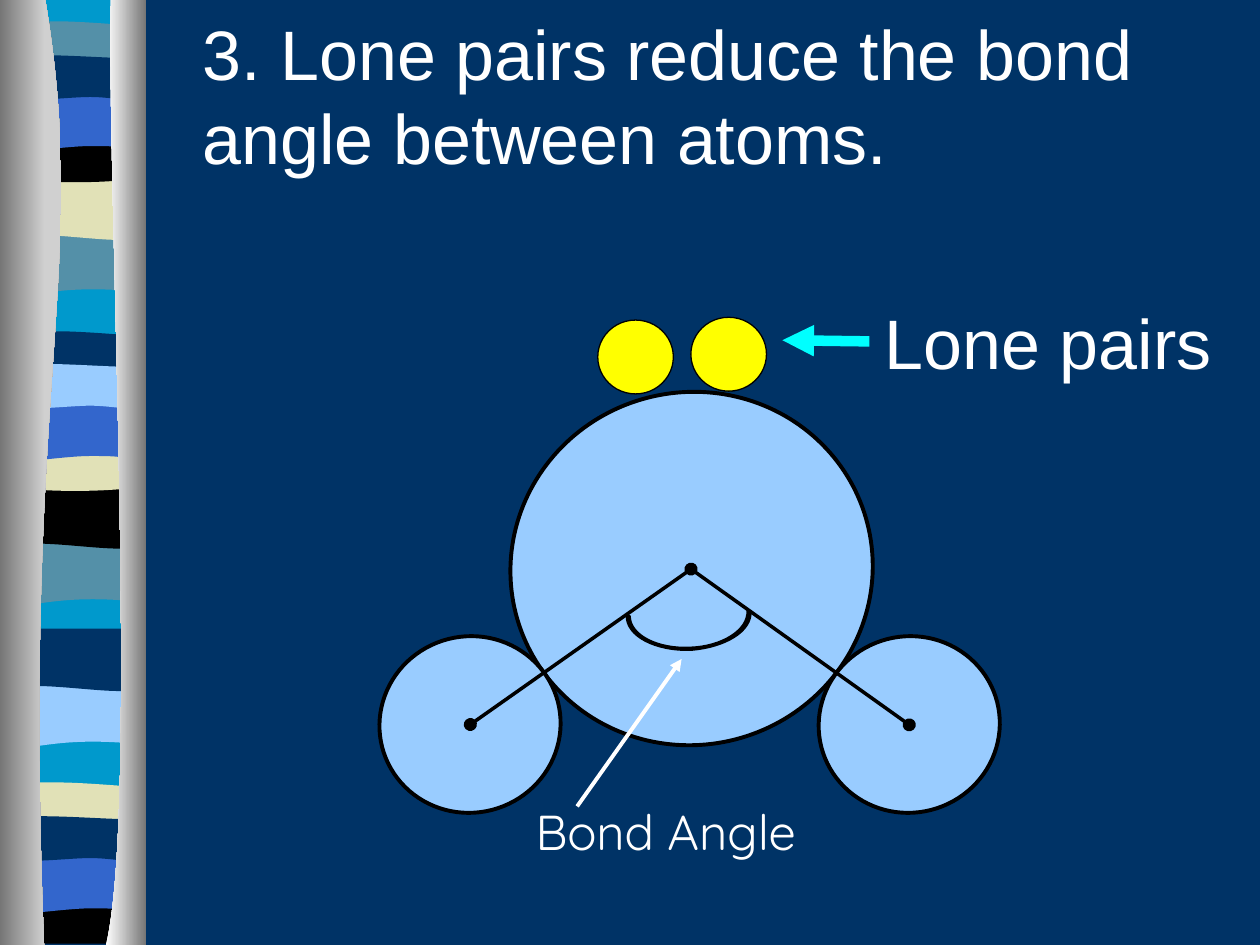
from lxml import etree
from pptx import Presentation
from pptx import util as u
from pptx.dml.color import RGBColor
from pptx.enum import shapes, text
from pptx.oxml import ns

Pt = u.Pt
NAVY = RGBColor(0x00, 0x33, 0x66)
TEAL = RGBColor(0x00, 0x99, 0xCC)
SLATE = RGBColor(0x54, 0x90, 0xA8)
CREAM = RGBColor(0xE1, 0xE1, 0xB7)
ROYAL = RGBColor(0x33, 0x66, 0xCC)
SKY = RGBColor(0x99, 0xCC, 0xFF)
BLACK = RGBColor(0x00, 0x00, 0x00)
WHITE = RGBColor(0xFF, 0xFF, 0xFF)
YELLOW = RGBColor(0xFF, 0xFF, 0x00)
CYAN = RGBColor(0x00, 0xFF, 0xFF)
GREY = RGBColor(0x76, 0x76, 0x76)
SILVER = RGBColor(0xD0, 0xD0, 0xD0)

L, R = 3.8, 81.8
BANDS = {
    "dip": [(R, 0), (R, 33.8), (28, 28.1, 17, 39.6, L, 33.8), (L, 0)],
    "swell": [(R, 0), (R, 33.8), (69, 39.6, 28, 29.5, L, 33.8), (L, 0)],
    "crest": [(R, 0), (R, 17.3), (69, 20.2, 17, 20.2, L, 17.3), (L, 0),
              (8.6, -3.6, 21, -2.9, 33.5, -2.9), (46.5, -2.9, 72, -0.7, R, 0)],
    "bowl": [(R, 0), (R, 23.2), (69, 27.4, 17, 27.4, L, 23.2), (L, 0),
             (51.5, 3.6, 65.5, 0, R, 0)],
    "arch": [(R, 0), (R, 33.8), (70, 30.2, 65, 30.2, 51.5, 30.2),
             (39, 30.2, 15.5, 33.8, L, 33.8), (L, 0)],
    "ripple": [(R, 0), (R, 22.3), (77, 25.9, 65, 22.3, 51.5, 22.3),
               (39, 22.3, 12, 25.9, L, 22.3), (L, 0),
               (15, -3.6, 57, 0, 70, 0), (82.8, 0, 79, 0, R, 0)],
    "floor": [(R, 0), (R, 26.6), (L, 26.6), (L, 0), (51.5, 3.6, 65.5, 0, R, 0)],
}
STRIPES = [
    ("dip", 133.2, SLATE), ("swell", 101.5, CREAM), ("crest", 15.1, SLATE),
    ("bowl", 77.8, BLACK), ("arch", 53.3, ROYAL), ("ripple", 33.1, NAVY),
    ("dip", 310.3, SLATE), ("swell", 277.9, BLACK), ("crest", 192.2, NAVY),
    ("bowl", 254.2, CREAM), ("arch", 230.4, ROYAL), ("ripple", 209.5, SKY),
    ("dip", 391.7, SKY), ("swell", 359.3, NAVY), ("crest", 450, CREAM),
    ("floor", 512.6, BLACK), ("arch", 488.9, ROYAL), ("ripple", 468, NAVY),
]
LEFT_CURTAIN = [(25.9, 0), (51.8, 155.5, 12.2, 213.1, 25.2, 540), (0, 540), (0, 0)]
RIGHT_CURTAIN = [(63.4, 0), (60.5, 90, 79.9, 465.1, 60.5, 540), (83.5, 540), (83.5, 0)]
ANGLE_ARC = [(360, 352), (360, 363, 376, 371, 394.6, 370),
             (412.5, 369.4, 427.7, 360, 427, 349), (429, 349),
             (430, 361, 414, 370, 394.6, 371.5), (374.4, 372, 358, 363.6, 358, 352)]


def bend(outline, segments, top):
    path = next(outline._element.iter(ns.qn("a:path")))
    for step, segment in zip(list(path), segments):
        if len(segment) == 2:
            continue
        curve = etree.Element(ns.qn("a:cubicBezTo"))
        for x, y in zip(segment[::2], segment[1::2]):
            etree.SubElement(curve, ns.qn("a:pt"), x=str(Pt(x) - outline.left),
                             y=str(Pt(y + top) - outline.top))
        path.replace(step, curve)


def add_outline(slide, segments, color=None, top=0):
    corners = [(Pt(segment[-2]), Pt(segment[-1] + top)) for segment in segments]
    builder = slide.shapes.build_freeform(*corners[0], scale=1.0)
    builder.add_line_segments(corners[1:], close=True)
    outline = builder.convert_to_shape()
    bend(outline, segments, top)
    outline.shadow.inherit = False
    outline.line.fill.background()
    if color is not None:
        outline.fill.solid()
        outline.fill.fore_color.rgb = color
    return outline


def add_curtain(slide, segments, left_color, right_color):
    fill = add_outline(slide, segments).fill
    fill.gradient()
    fill.gradient_angle = 0
    for stop, color in zip(fill.gradient_stops, (left_color, right_color)):
        stop.color.rgb = color


def add_circle(slide, center, size, color, weight, turn=0):
    (x, y), (width, height) = center, size
    circle = slide.shapes.add_shape(
        shapes.MSO_SHAPE.OVAL, Pt(x - width / 2), Pt(y - height / 2), Pt(width), Pt(height))
    circle.shadow.inherit = False
    circle.rotation = turn
    circle.fill.solid()
    circle.fill.fore_color.rgb = color
    circle.line.color.rgb = BLACK
    circle.line.width = Pt(weight)


def add_line(slide, start, end, color, weight, arrow=False):
    line = slide.shapes.add_connector(
        shapes.MSO_CONNECTOR.STRAIGHT, *(Pt(value) for value in start + end))
    line.line.color.rgb = color
    line.line.width = Pt(weight)
    properties = line._element.spPr
    if arrow:
        etree.SubElement(properties.find(ns.qn("a:ln")), ns.qn("a:tailEnd"), type="triangle")
    etree.SubElement(properties, ns.qn("a:effectLst"))


def place(box, left, top, width, height):
    box.left, box.top, box.width, box.height = (Pt(v) for v in (left, top, width, height))


def write(box, words, font_name, size):
    frame = box.text_frame
    frame.word_wrap = True
    frame.auto_size = text.MSO_AUTO_SIZE.NONE
    frame.vertical_anchor = text.MSO_ANCHOR.TOP
    frame.text = words
    paragraph = frame.paragraphs[0]
    paragraph.alignment = text.PP_ALIGN.LEFT
    paragraph.font.name = font_name
    paragraph.font.size = Pt(size)
    paragraph.font.color.rgb = WHITE
    return frame


def add_label(slide, words, bounds, font_name, size):
    label = slide.shapes.add_textbox(*(Pt(value) for value in bounds))
    return write(label, words, font_name, size)


def add_title(slide):
    title = slide.shapes.title
    place(title, 82.8, 0, 612, 185.8)
    frame = write(title, "3. Lone pairs reduce the bond angle between atoms.", "Arial", 40)
    frame.margin_left, frame.margin_top = Pt(33), Pt(6)
    frame.paragraphs[0].line_spacing = Pt(48)


def add_ribbon(slide):
    add_outline(slide, [(R, 0), (R, 538), (L, 538), (L, 0)], TEAL)
    for band, top, color in STRIPES:
        add_outline(slide, BANDS[band], color, top)
    add_curtain(slide, LEFT_CURTAIN, GREY, SILVER)
    add_curtain(slide, RIGHT_CURTAIN, WHITE, GREY)


def add_molecule(slide):
    tilt = 345.6
    nucleus, left_atom, right_atom = (394.9, 325.2), (268.8, 414), (519.6, 414.2)
    add_circle(slide, (395.2, 324.9), (207.4, 201.6), SKY, 2.25, tilt)
    for x in (268.6, 519.6):
        add_circle(slide, (x, 414), (103.7, 100.8), SKY, 2.25, tilt)
    for center in (nucleus, left_atom, right_atom):
        add_circle(slide, center, (6.8, 6.6), BLACK, 0.75, tilt)
    for atom in (left_atom, right_atom):
        add_line(slide, nucleus, atom, BLACK, 2)
    arc = add_outline(slide, ANGLE_ARC, BLACK)
    arc.line.color.rgb = BLACK
    arc.line.width = Pt(1)
    for center in ((363.2, 204), (416.4, 202.4)):
        add_circle(slide, center, (43.2, 42.2), YELLOW, 0.75)


def add_callouts(slide):
    angle = add_label(slide, "Bond Angle", (305.3, 457.2, 176.4, 30.2), "Quicksand", 28)
    angle.margin_left = angle.margin_right = angle.margin_top = angle.margin_bottom = Pt(0.7)
    add_line(slide, (329.8, 460.8), (389.5, 376.6), WHITE, 2.25, arrow=True)
    add_label(slide, "Lone pairs", (498.5, 167.5, 221.5, 55), "Arial", 40)
    add_line(slide, (496.8, 195.1), (447.1, 194.4), CYAN, 6, arrow=True)


def main():
    deck = Presentation()
    deck.slide_width, deck.slide_height = Pt(720), Pt(540)
    slide = deck.slides.add_slide(deck.slide_layouts[5])
    slide.background.fill.solid()
    slide.background.fill.fore_color.rgb = NAVY
    add_ribbon(slide)
    add_title(slide)
    add_molecule(slide)
    add_callouts(slide)
    deck.save("out.pptx")


if __name__ == "__main__":
    main()
